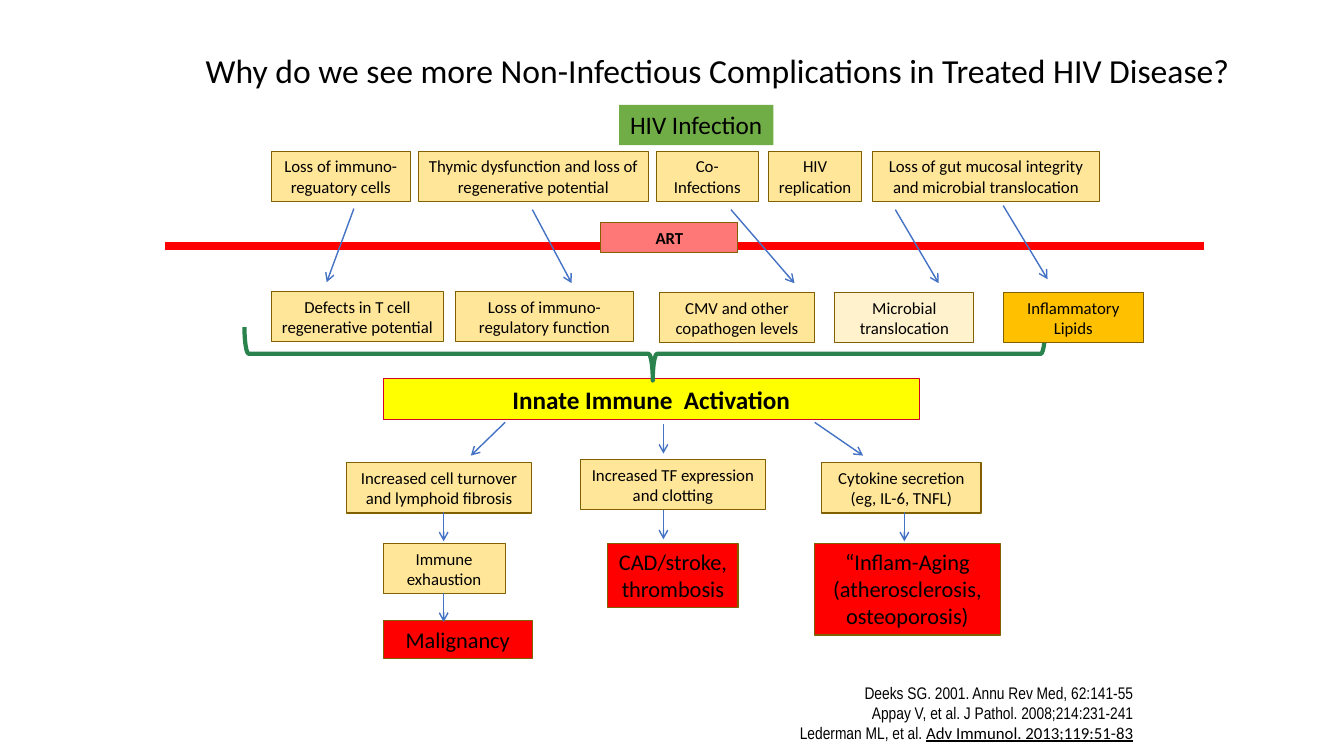
from dataclasses import dataclass

from lxml import etree
from pptx import Presentation
from pptx import util as u
from pptx.dml.color import RGBColor
from pptx.enum import shapes, text
from pptx.oxml.ns import qn

WIDTH, HEIGHT = u.Inches(13.33), u.Inches(7.5)
ROWS = 75
CELL = HEIGHT / ROWS  # square grid cells, used for columns and rows alike

COLORS = {
    "text": "000000", "sand": "FFE699", "cream": "FFF2CC", "amber": "FFC000",
    "yellow": "FFFF00", "red": "FF0000", "green": "70AD47", "border": "806000",
    "crimson": "D20224", "arrow": "4472C4", "brace": "2A824C",
}
FORMATS = {
    "title": {"name": "Calibri", "size": u.Pt(24), "bold": False},
    "heading": {"name": "Calibri", "size": u.Pt(18)},
    "banner": {"name": "Calibri", "size": u.Pt(18), "bold": True},
    "disease": {"name": "Calibri", "size": u.Pt(16)},
    "factor": {"name": "Calibri", "size": u.Pt(12)},
    "therapy": {"name": "Calibri", "size": u.Pt(12), "bold": True},
    "citation": {"name": "Arial Narrow", "size": u.Pt(12)},
    "cited": {"name": "Calibri", "size": u.Pt(12), "underline": True},
}
FRAME = {"word_wrap": True, "vertical_anchor": text.MSO_ANCHOR.TOP,
         "auto_size": text.MSO_AUTO_SIZE.SHAPE_TO_FIT_TEXT}
CENTER, LEFT, RIGHT = text.PP_ALIGN.CENTER, text.PP_ALIGN.LEFT, text.PP_ALIGN.RIGHT


@dataclass
class Region:
    """A part of the slide; positions inside it count columns and rows from its corner."""
    slide: object
    column: float
    row: float

    def point(self, column, row):
        return round((self.column + column) * CELL), round((self.row + row) * CELL)

    def area(self, column, row, width, height):
        return *self.point(column, row), round(width * CELL), round(height * CELL)


def color(name):
    return RGBColor.from_string(COLORS[name])


def set_values(target, values):
    for name, value in values.items():
        setattr(target, name, value)


def write(shape, paragraphs, align=CENTER):
    """Fill a shape with paragraphs, each a list of (wording, format name) runs."""
    frame = shape.text_frame
    set_values(frame, FRAME)
    for index, runs in enumerate(paragraphs):
        paragraph = frame.add_paragraph() if index else frame.paragraphs[0]
        paragraph.alignment = align
        for wording, style in runs:
            run = paragraph.add_run()
            run.text = wording
            set_values(run.font, FORMATS[style])
            run.font.color.rgb = color("text")


def add_box(region, area, wording, fill="sand", style="factor", border="border"):
    box = region.slide.shapes.add_shape(shapes.MSO_SHAPE.RECTANGLE, *region.area(*area))
    box.shadow.inherit = False
    box.fill.solid()
    box.fill.fore_color.rgb = color(fill)
    if border:
        box.line.color.rgb = color(border)
        box.line.width = u.Pt(0.75)
    else:
        box.line.fill.background()
    write(box, [[(line, style)] for line in wording.split("\n")])
    return box


def add_line(region, start, end, line_color="arrow", width=1, arrow=True):
    line = region.slide.shapes.add_connector(
        shapes.MSO_CONNECTOR.STRAIGHT, *region.point(*start), *region.point(*end))
    line.line.color.rgb = color(line_color)
    line.line.width = u.Pt(width)
    properties = line._element.spPr
    if arrow:
        etree.SubElement(properties.find(qn("a:ln")), qn("a:tailEnd"), type="arrow")
    etree.SubElement(properties, qn("a:effectLst"))


def add_title(slide, region):
    title = slide.shapes.title
    set_values(title, dict(zip(("left", "top", "width", "height"),
                               region.area(0, 0, 113, 5))))
    wording = "Why do we see more Non-Infectious Complications in Treated HIV Disease?"
    write(title, [[(wording, "title")]], LEFT)


def add_causes(region):
    heading = add_box(region, (34.5, 0, 15.3, 4), "HIV Infection", "green", "heading", None)
    heading.text_frame.word_wrap = False
    for left, width, wording in (
            (0, 13.8, "Loss of immuno-reguatory cells"),
            (14.6, 22.8, "Thymic dysfunction and loss of regenerative potential"),
            (38.2, 10.1, "Co-Infections"),
            (49.3, 9.3, "HIV replication"),
            (59.6, 22.6, "Loss of gut mucosal integrity and microbial translocation")):
        add_box(region, (left, 4.6, width, 5), wording)


def add_activation(region):
    add_box(region, (12.4, 5.2, 53.2, 4), "Innate Immune  Activation",
            "yellow", "banner", "crimson")
    span, depth = 79.4, 5.3
    middle_column, middle_row = 38.35, 2.7
    brace = region.slide.shapes.add_shape(shapes.MSO_SHAPE.LEFT_BRACE, *region.area(
        middle_column - depth / 2, middle_row - span / 2, depth, span))
    brace.rotation = 270
    brace.adjustments[0], brace.adjustments[1] = 0.08, 0.51
    brace.shadow.inherit = False
    brace.fill.background()
    brace.line.color.rgb = color("brace")
    brace.line.width = u.Pt(3)


def add_effects(region):
    for left, top, width, wording, fill in (
            (0, 0, 17.1, "Defects in T cell regenerative potential", "sand"),
            (18.3, 0, 17.6, "Loss of immuno-regulatory function", "sand"),
            (38.5, 0.1, 15.4, "CMV and other copathogen levels", "sand"),
            (55.9, 0.1, 13.8, "Microbial translocation", "cream"),
            (72.6, 0.1, 13.9, "Inflammatory Lipids", "amber")):
        add_box(region, (left, top, width, 5), wording, fill)


def add_therapy_barrier(region):
    """The ART line, crossed by the arrows that lead from causes to effects."""
    for start, end in ((0, 43.2), (56.7, 103)):
        add_line(region, (start, 2.3), (end, 2.3), "red", 6, arrow=False)
    therapy = add_box(region, (43.2, 0, 13.6, 3), "ART", "red", "therapy")
    fill = therapy._element.spPr.find(qn("a:solidFill"))
    etree.SubElement(fill[0], qn("a:alpha"), val="53000")
    drop = 7.3
    for start, shift, top in ((18.7, -2.7, -1.4), (36.4, 3.9, -1.3), (56.1, 6.3, -1.3),
                              (72.4, 4.3, -1.3), (83.1, 4.4, -1.7)):
        add_line(region, (start, top), (start + shift, top + drop))


def add_outcomes(region):
    """Three chains of consequences below the activation banner."""
    for area, wording in (
            ((0, 4, 18.3, 5), "Increased cell turnover and lymphoid fibrosis"),
            ((23.2, 3.7, 18.3, 5), "Increased TF expression and clotting"),
            ((47.1, 4, 15.8, 5), "Cytokine secretion (eg, IL-6, TNFL)"),
            ((3.6, 12, 12.1, 5), "Immune exhaustion")):
        add_box(region, area, wording)
    for area, wording in (
            ((3.6, 19.7, 14.8, 3.7), "Malignancy"),
            ((25.9, 12, 12.9, 6.4), "CAD/stroke, thrombosis"),
            ((46.4, 12, 18.4, 9.1), "“Inflam-Aging\n(atherosclerosis, osteoporosis)")):
        add_box(region, area, wording, "red", "disease")
    for start, shift in ((15.7, -3.4), (46.4, 4.8)):
        add_line(region, (start, 0), (start + shift, 3.3))
    for column, top in ((31.4, 0.2), (31.4, 8.7), (9.6, 8.9), (9.6, 16.9), (55.3, 8.9)):
        add_line(region, (column, top), (column, top + 2.9))


def add_references(region):
    references = region.slide.shapes.add_textbox(*region.area(0, 0, 39.4, 7.1))
    write(references, [
        [("Deeks SG. 2001. Annu Rev Med, 62:141-55", "citation")],
        [("Appay V, et al. J Pathol. 2008;214:231-241", "citation")],
        [("Lederman ML, et al. ", "citation"), ("Adv Immunol. 2013;119:51-83", "cited")],
    ], RIGHT)


def main():
    presentation = Presentation()
    presentation.slide_width, presentation.slide_height = WIDTH, HEIGHT
    slide = presentation.slides.add_slide(presentation.slide_layouts.get_by_name("Title Only"))
    add_title(slide, Region(slide, 19.4, 4.4))
    for add_region, column, row in (
            (add_references, 74, 67.2), (add_causes, 26.9, 10.4),
            (add_activation, 25.6, 32.4), (add_effects, 26.9, 28.9),
            (add_therapy_barrier, 16.4, 22.1), (add_outcomes, 34.4, 41.9)):
        add_region(Region(slide, column, row))
    presentation.save("out.pptx")


if __name__ == "__main__":
    main()
